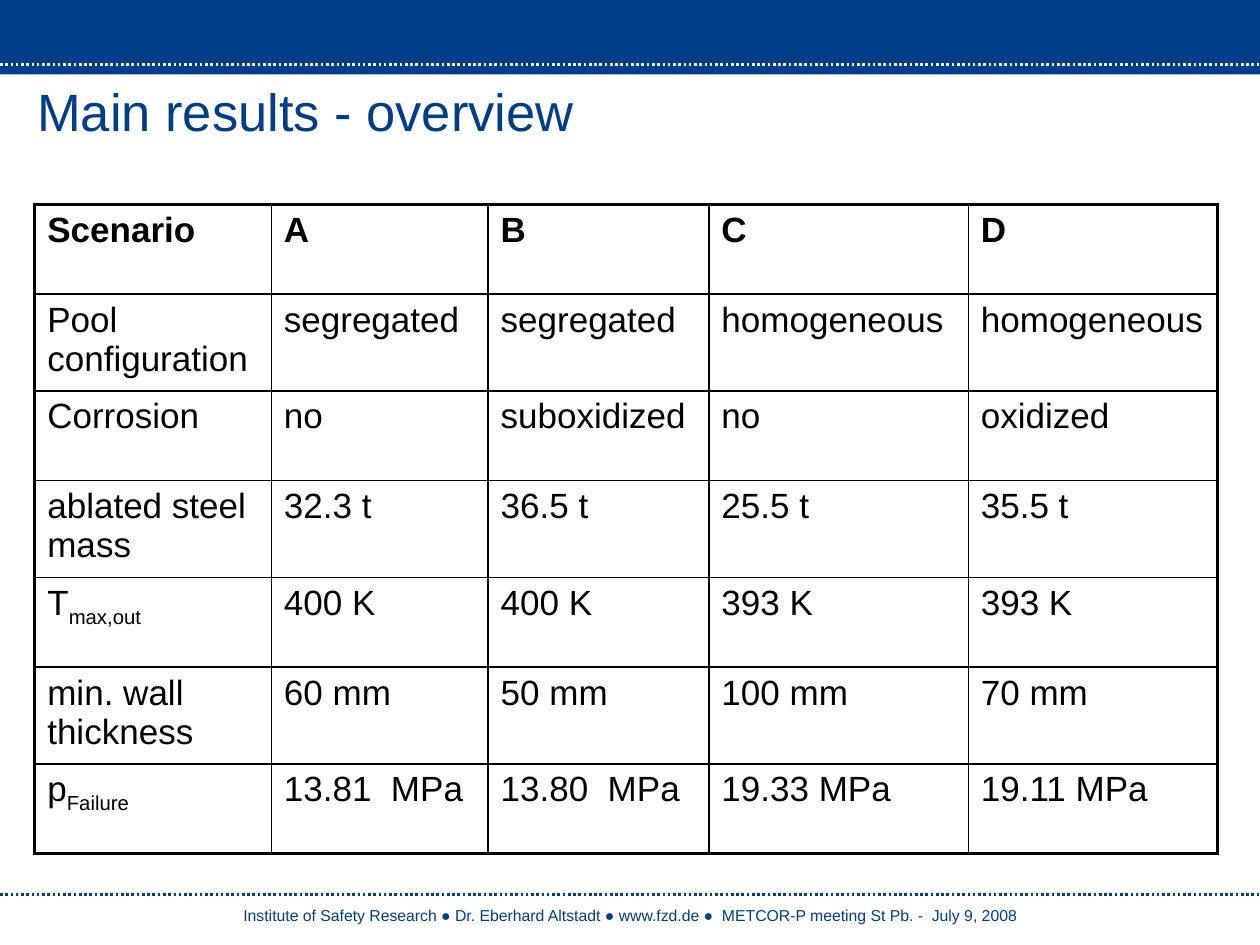
"""Build the scenario results overview slide."""
from dataclasses import dataclass

from lxml import etree
from pptx import Presentation
from pptx import util as u
from pptx.dml.color import RGBColor
from pptx.enum import dml, shapes, text
from pptx.oxml import ns

COLORS = {"navy": "003E89", "white": "FFFFFF", "black": "000000"}
FONT = "Arial"
WIDTH, HEIGHT = u.Cm(25.4), u.Cm(19.05)
COLUMN_WIDTHS = [4.77, 4.37, 4.45, 5.23, 5.03]
ROW_HEIGHT = 1.81
OUTER, INNER = u.Pt(2.25), u.Pt(1)
FOOTER = (
    "Institute of Safety Research ● Dr. Eberhard Altstadt ● www.fzd.de ●  "
    "METCOR-P meeting St Pb. -  July 9, 2008"
)


@dataclass
class DottedLine:
    top: float
    color: str


@dataclass
class Quantity:
    label: str
    values: list[str]
    subscript: str = ""
    bold: bool = False


LINES = [DottedLine(18.03, "navy"), DottedLine(1.3, "white")]
QUANTITIES = [
    Quantity("Scenario", ["A", "B", "C", "D"], bold=True),
    Quantity("Pool configuration", ["segregated"] * 2 + ["homogeneous"] * 2),
    Quantity("Corrosion", ["no", "suboxidized", "no", "oxidized"]),
    Quantity("ablated steel mass", ["32.3 t", "36.5 t", "25.5 t", "35.5 t"]),
    Quantity("T", ["400 K", "400 K", "393 K", "393 K"], "max,out"),
    Quantity("min. wall thickness", ["60 mm", "50 mm", "100 mm", "70 mm"]),
    Quantity("p", ["13.81  MPa", "13.80  MPa", "19.33 MPa", "19.11 MPa"], "Failure"),
]


def rgb(name: str) -> RGBColor:
    """Return a named colour."""
    return RGBColor.from_string(COLORS[name])


def style(para, size: float, color: str, bold: bool = False) -> None:
    """Set the font of a paragraph."""
    para.font.name = FONT
    para.font.size = u.Pt(size)
    para.font.bold = bold
    para.font.color.rgb = rgb(color)


def add_band(page) -> None:
    """Draw the header band."""
    band = page.shapes.add_shape(shapes.MSO_SHAPE.RECTANGLE, 0, 0, WIDTH, u.Cm(1.5))
    band.shadow.inherit = False
    band.fill.solid()
    band.fill.fore_color.rgb = rgb("navy")
    band.line.fill.background()


def add_dotted_line(page, spec_line: DottedLine) -> None:
    """Draw a dotted line across the slide."""
    top = u.Cm(spec_line.top)
    rule = page.shapes.add_connector(shapes.MSO_CONNECTOR.STRAIGHT, 0, top, WIDTH, top)
    rule.line.color.rgb = rgb(spec_line.color)
    rule.line.width = u.Pt(1.5)
    rule.line.dash_style = dml.MSO_LINE.ROUND_DOT
    etree.SubElement(rule._element.spPr, ns.qn("a:effectLst"))


def add_title(page, words: str) -> None:
    """Fill and place the title placeholder."""
    title = page.shapes.title
    title.left, title.top = u.Cm(0.5), u.Cm(1.52)
    title.width, title.height = u.Cm(24.2), u.Cm(1.4)
    frame = title.text_frame
    frame.text = words
    frame.auto_size = text.MSO_AUTO_SIZE.NONE
    frame.vertical_anchor = text.MSO_ANCHOR.MIDDLE
    frame.margin_left = frame.margin_right = u.Cm(0.25)
    frame.margin_top = frame.margin_bottom = u.Cm(0.05)
    frame.paragraphs[0].alignment = text.PP_ALIGN.LEFT
    style(frame.paragraphs[0], 30, "navy")


def add_footer(page) -> None:
    """Write the centred footer."""
    box = page.shapes.add_textbox(0, u.Cm(18.14), WIDTH, u.Cm(0.64))
    box.text_frame.word_wrap = True
    para = box.text_frame.paragraphs[0]
    para.text = FOOTER
    para.alignment = text.PP_ALIGN.CENTER
    style(para, 9, "navy")


def set_borders(cell, widths: dict[str, int]) -> None:
    """Draw black cell borders, keyed by side in schema order."""
    properties = cell._tc.get_or_add_tcPr()
    for index, (side, width) in enumerate(widths.items()):
        border = etree.Element(ns.qn(f"a:ln{side}"), w=str(int(width)))
        fill = etree.SubElement(border, ns.qn("a:solidFill"))
        etree.SubElement(fill, ns.qn("a:srgbClr"), val=COLORS["black"])
        properties.insert(index, border)


def fill_cell(cell, words: str, subscript: str, bold: bool) -> None:
    """Write a cell with an optional subscript."""
    cell.fill.background()
    para = cell.text_frame.paragraphs[0]
    para.add_run().text = words
    if subscript:
        span = para.add_run()
        span.text = subscript
        span._r.get_or_add_rPr().set("baseline", "-25000")
    style(para, 20, "black", bold)


def add_results(page) -> None:
    """Draw the results table."""
    rows, columns = len(QUANTITIES), len(COLUMN_WIDTHS)
    frame = page.shapes.add_table(
        rows, columns, u.Cm(0.7), u.Cm(4.12),
        u.Cm(sum(COLUMN_WIDTHS)), u.Cm(rows * ROW_HEIGHT),
    )
    table = frame.table
    table.first_row = table.horz_banding = False
    for column, width in zip(table.columns, COLUMN_WIDTHS):
        column.width = u.Cm(width)
    for i, quantity in enumerate(QUANTITIES):
        table.rows[i].height = u.Cm(ROW_HEIGHT)
        for j, words in enumerate([quantity.label, *quantity.values]):
            cell = table.cell(i, j)
            fill_cell(cell, words, "" if j else quantity.subscript, quantity.bold)
            set_borders(cell, {
                "L": OUTER if j == 0 else INNER,
                "R": OUTER if j == columns - 1 else INNER,
                "T": OUTER if i == 0 else INNER,
                "B": OUTER if i == rows - 1 else INNER,
            })


def main() -> None:
    """Build and save the deck."""
    deck = Presentation()
    deck.slide_width, deck.slide_height = WIDTH, HEIGHT
    page = deck.slides.add_slide(deck.slide_layouts.get_by_name("Title Only"))
    add_footer(page)
    add_band(page)
    for dotted in LINES:
        add_dotted_line(page, dotted)
    add_title(page, "Main results - overview")
    add_results(page)
    deck.save("out.pptx")


if __name__ == "__main__":
    main()
